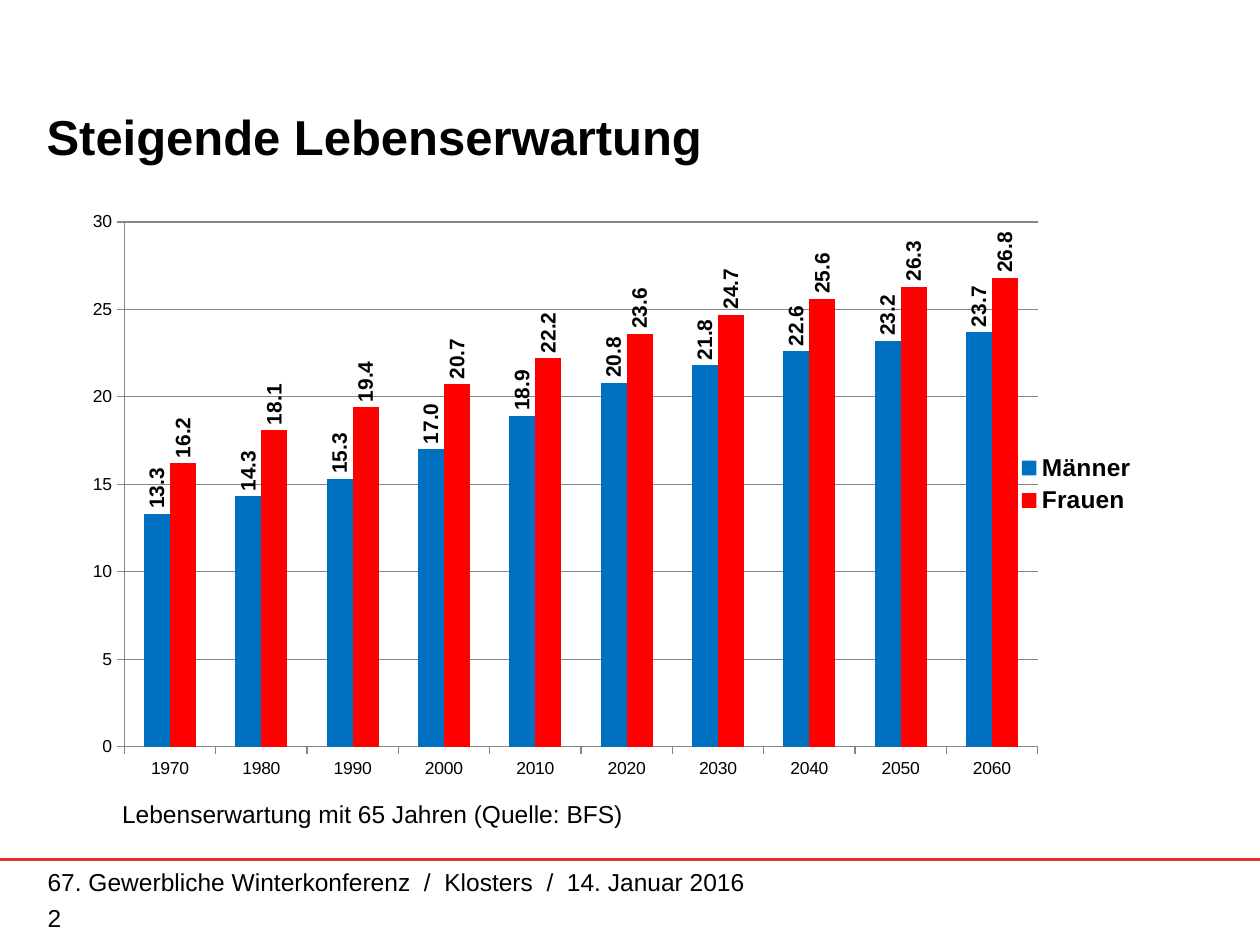
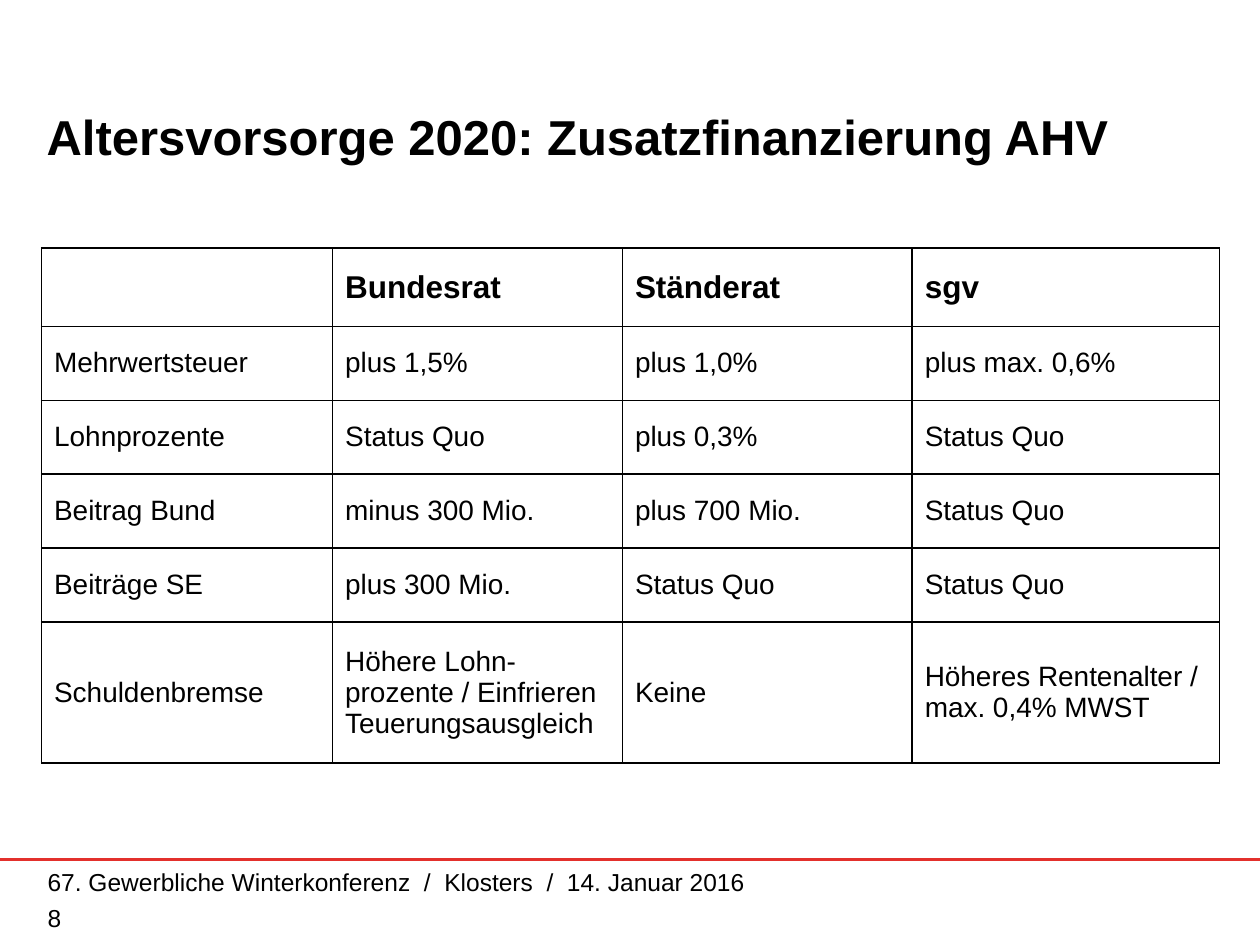
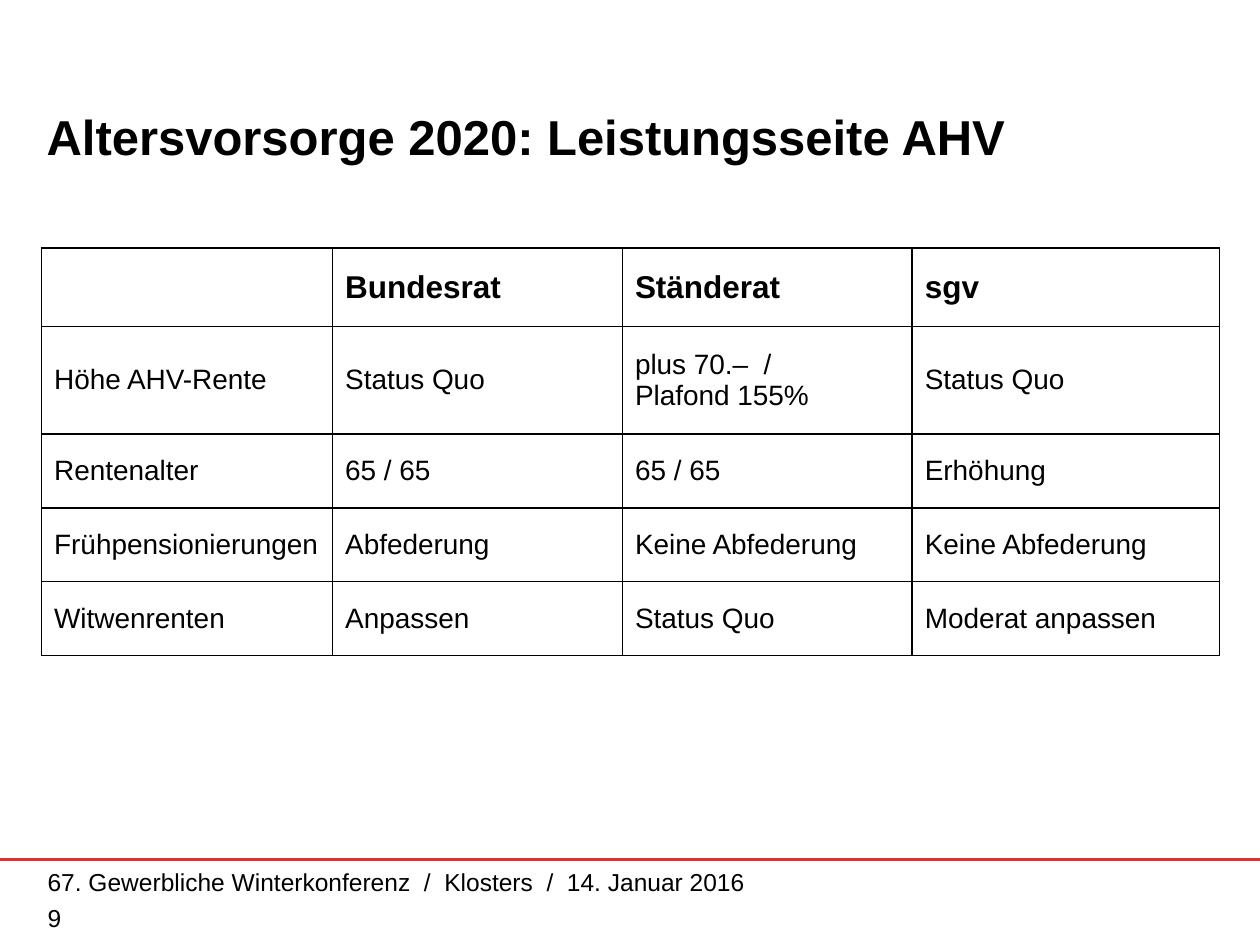
from lxml import etree
from pptx import Presentation
from pptx.chart.data import CategoryChartData
from pptx.dml.color import RGBColor
from pptx.enum.chart import XL_CHART_TYPE, XL_LABEL_POSITION, XL_LEGEND_POSITION, XL_TICK_MARK
from pptx.enum.shapes import MSO_CONNECTOR
from pptx.enum.text import MSO_ANCHOR, PP_ALIGN
from pptx.oxml import parse_xml
from pptx.oxml.ns import nsdecls, qn
from pptx.util import Inches, Pt

COLUMNS = XL_CHART_TYPE.COLUMN_CLUSTERED
OUTSIDE = XL_LABEL_POSITION.OUTSIDE_END
RIGHT = XL_LEGEND_POSITION.RIGHT
TICK_OUT = XL_TICK_MARK.OUTSIDE
STRAIGHT = MSO_CONNECTOR.STRAIGHT
MIDDLE = MSO_ANCHOR.MIDDLE
LEFT = PP_ALIGN.LEFT

FONT = "Arial"
BLACK, GRAY, RULE = "000000", "868686", "E3302C"
BLUE, RED = "0070C0", "FF0000"
FOOTER = "67. Gewerbliche Winterkonferenz  /  Klosters  /  14. Januar 2016"

YEARS = range(1970, 2061, 10)
LIVES = [
    ("Männer", BLUE, [13.3, 14.3, 15.3, 17, 18.9, 20.8, 21.8, 22.6, 23.2, 23.7]),
    ("Frauen", RED, [16.2, 18.1, 19.4, 20.7, 22.2, 23.6, 24.7, 25.6, 26.3, 26.8]),
]

HEAD = ["", "Bundesrat", "Ständerat", "sgv"]
FUNDING = [
    ["Mehrwertsteuer", "plus 1,5%", "plus 1,0%", "plus max. 0,6%"],
    ["Lohnprozente", "Status Quo", "plus 0,3%", "Status Quo"],
    ["Beitrag Bund", "minus 300 Mio.", "plus 700 Mio.", "Status Quo"],
    ["Beiträge SE", "plus 300 Mio.", "Status Quo", "Status Quo"],
    ["Schuldenbremse", "Höhere Lohn-prozente / Einfrieren Teuerungsausgleich",
     "Keine", "Höheres Rentenalter /\vmax. 0,4% MWST"],
]
BENEFITS = [
    ["Höhe AHV-Rente", "Status Quo", "plus 70.–  /\vPlafond 155%", "Status Quo"],
    ["Rentenalter", "65 / 65", "65 / 65", "Erhöhung"],
    ["Frühpensionierungen", "Abfederung", "Keine Abfederung", "Keine Abfederung"],
    ["Witwenrenten", "Anpassen", "Status Quo", "Moderat anpassen"],
]
WIDTHS = [2.31, 2.3, 2.3, 2.44]
ROW_HEAD, ROW_ONE, ROW_TWO, ROW_THREE = 0.61, 0.58, 0.83, 1.07


def color(code):
    return RGBColor.from_string(code)


def style(font, size, bold=False):
    font.name = FONT
    font.size = Pt(size)
    font.bold = bold
    font.color.rgb = color(BLACK)


def add_text(slide, text, left, top, width, height, anchor=None):
    box = slide.shapes.add_textbox(*map(Inches, (left, top, width, height)))
    frame = box.text_frame
    frame.word_wrap = True
    frame.vertical_anchor = anchor
    frame.text = text
    style(frame.paragraphs[0].font, 14)


def add_rule(slide):
    y = Inches(6.82)
    rule = slide.shapes.add_connector(STRAIGHT, Inches(10), y, 0, y)
    rule.line.color.rgb = color(RULE)
    rule.line.width = Pt(1.5)
    etree.SubElement(rule._element.spPr, qn("a:effectLst"))


def add_slide(deck, title, page):
    """Add a slide with its title and the shared footer."""
    slide = deck.slides.add_slide(deck.slide_layouts[5])
    add_text(slide, FOOTER, 0.28, 6.8, 9.7, 0.39, MIDDLE)
    add_rule(slide)
    add_text(slide, str(page), 0.28, 7.12, 0.79, 0.33)
    head = slide.shapes.title
    head.left, head.top, head.width, head.height = map(Inches, (0.27, 0.77, 9.45, 0.61))
    head.text_frame.text = title
    head.text_frame.vertical_anchor = MIDDLE
    para = head.text_frame.paragraphs[0]
    para.alignment = LEFT
    style(para.font, 28, True)
    return slide


def place_plot(chart, x, y, w, h):
    """Fix the inner plot area, in fractions of the chart."""
    area = chart._chartSpace.find(".//" + qn("c:plotArea"))
    for old in area.findall(qn("c:layout")):
        area.remove(old)
    sizes = "".join(f'<c:{tag} val="{val}"/>' for tag, val in zip("xywh", (x, y, w, h)))
    area.insert(0, parse_xml(
        f'<c:layout {nsdecls("c")}><c:manualLayout><c:layoutTarget val="inner"/>'
        f'<c:xMode val="edge"/><c:yMode val="edge"/>{sizes}</c:manualLayout></c:layout>'))


def draw_line(line):
    line.color.rgb = color(GRAY)
    line.width = Pt(0.75)


def format_series(series, code):
    series.format.fill.solid()
    series.format.fill.fore_color.rgb = color(code)
    series.invert_if_negative = False
    labels = series.data_labels
    labels.show_value = True
    labels.number_format = "#,##0.0"
    labels.number_format_is_linked = False
    labels.position = OUTSIDE
    style(labels.font, 12, True)
    body = labels._element.find(".//" + qn("a:bodyPr"))
    body.set("rot", "-5400000")
    body.set("vert", "horz")


def add_chart(slide):
    data = CategoryChartData()
    data.categories = [str(year) for year in YEARS]
    for name, _, vals in LIVES:
        data.add_series(name, vals)
    chart = slide.shapes.add_chart(
        COLUMNS, *map(Inches, (0.28, 1.53, 8.84, 4.65)), data).chart
    chart.has_title = False
    style(chart.font, 10)
    place_plot(chart, 0.08, 0.05, 0.82, 0.9)
    plot = chart.plots[0]
    plot.gap_width = 150
    plot.vary_by_categories = False
    for series, (_, code, _) in zip(plot.series, LIVES):
        format_series(series, code)
    for axis in (chart.category_axis, chart.value_axis):
        axis.major_tick_mark = TICK_OUT
        draw_line(axis.format.line)
    scale = chart.value_axis
    scale.minimum_scale, scale.maximum_scale, scale.major_unit = 0, 30, 5
    draw_line(scale.major_gridlines.format.line)
    chart.has_legend = True
    chart.legend.position = RIGHT
    chart.legend.include_in_layout = False
    style(chart.legend.font, 14, True)


def add_borders(cell):
    props = cell._tc.get_or_add_tcPr()
    for spot, side in enumerate("LRTB"):
        props.insert(spot, parse_xml(
            f'<a:ln{side} {nsdecls("a")} w="12700"><a:solidFill>'
            f'<a:srgbClr val="{BLACK}"/></a:solidFill></a:ln{side}>'))


def fill_cell(cell, text, size, bold):
    cell.text = text
    cell.vertical_anchor = MIDDLE
    cell.margin_left = cell.margin_right = Inches(0.1)
    cell.margin_top = cell.margin_bottom = Inches(0.16)
    cell.fill.background()
    add_borders(cell)
    style(cell.text_frame.paragraphs[0].font, size, bold)


def add_table(slide, body, heights):
    rows = [HEAD] + body
    heights = [ROW_HEAD] + heights
    table = slide.shapes.add_table(
        len(rows), len(HEAD), Inches(0.33), Inches(1.97),
        Inches(sum(WIDTHS)), Inches(sum(heights))).table
    table.first_row = table.horz_banding = False
    for col, width in zip(table.columns, WIDTHS):
        col.width = Inches(width)
    for r, (row, height) in enumerate(zip(rows, heights)):
        table.rows[r].height = Inches(height)
        for c, text in enumerate(row):
            fill_cell(table.cell(r, c), text, 16 if r else 18, r == 0)


def main():
    deck = Presentation()
    deck.slide_width, deck.slide_height = Inches(10), Inches(7.5)

    slide = add_slide(deck, "Steigende Lebenserwartung", 2)
    add_chart(slide)
    add_text(slide, "Lebenserwartung mit 65 Jahren (Quelle: BFS)", 0.87, 6.29, 6.22, 0.34)

    slide = add_slide(deck, "Altersvorsorge 2020: Zusatzfinanzierung AHV", 8)
    add_table(slide, FUNDING, [ROW_ONE] * 4 + [ROW_THREE])

    slide = add_slide(deck, "Altersvorsorge 2020: Leistungsseite AHV", 9)
    add_table(slide, BENEFITS, [ROW_TWO] + [ROW_ONE] * 3)

    deck.save("out.pptx")


if __name__ == "__main__":
    main()
